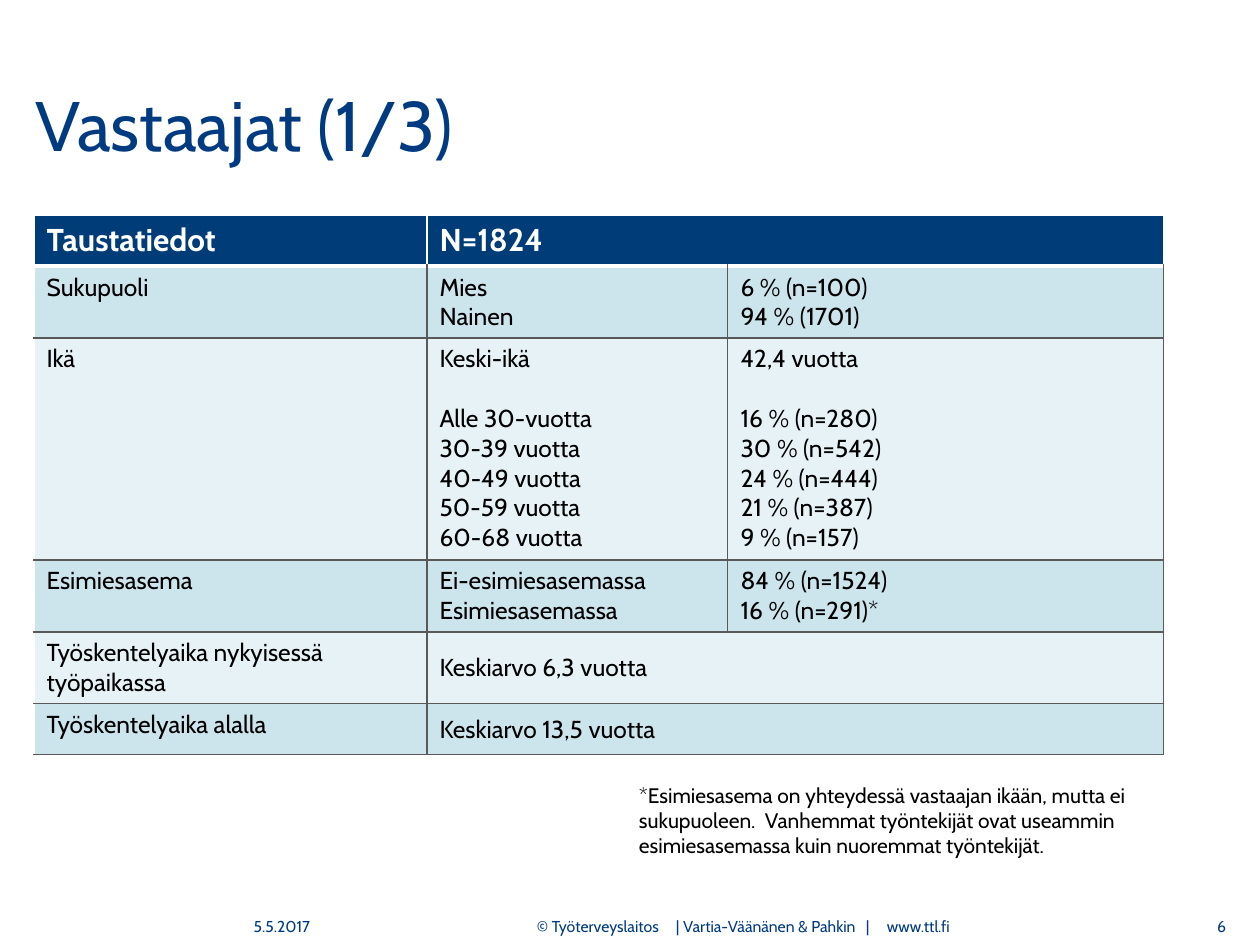
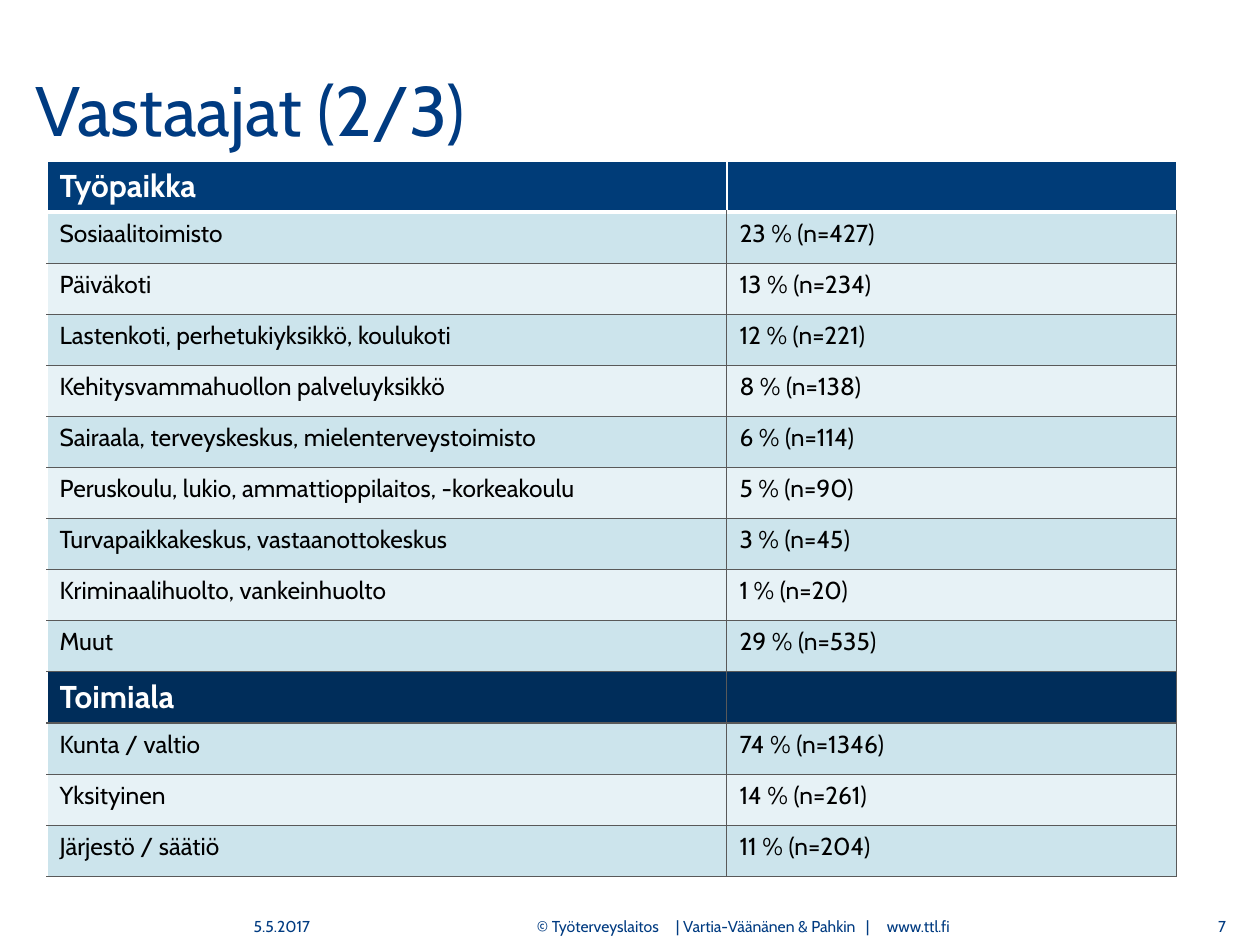
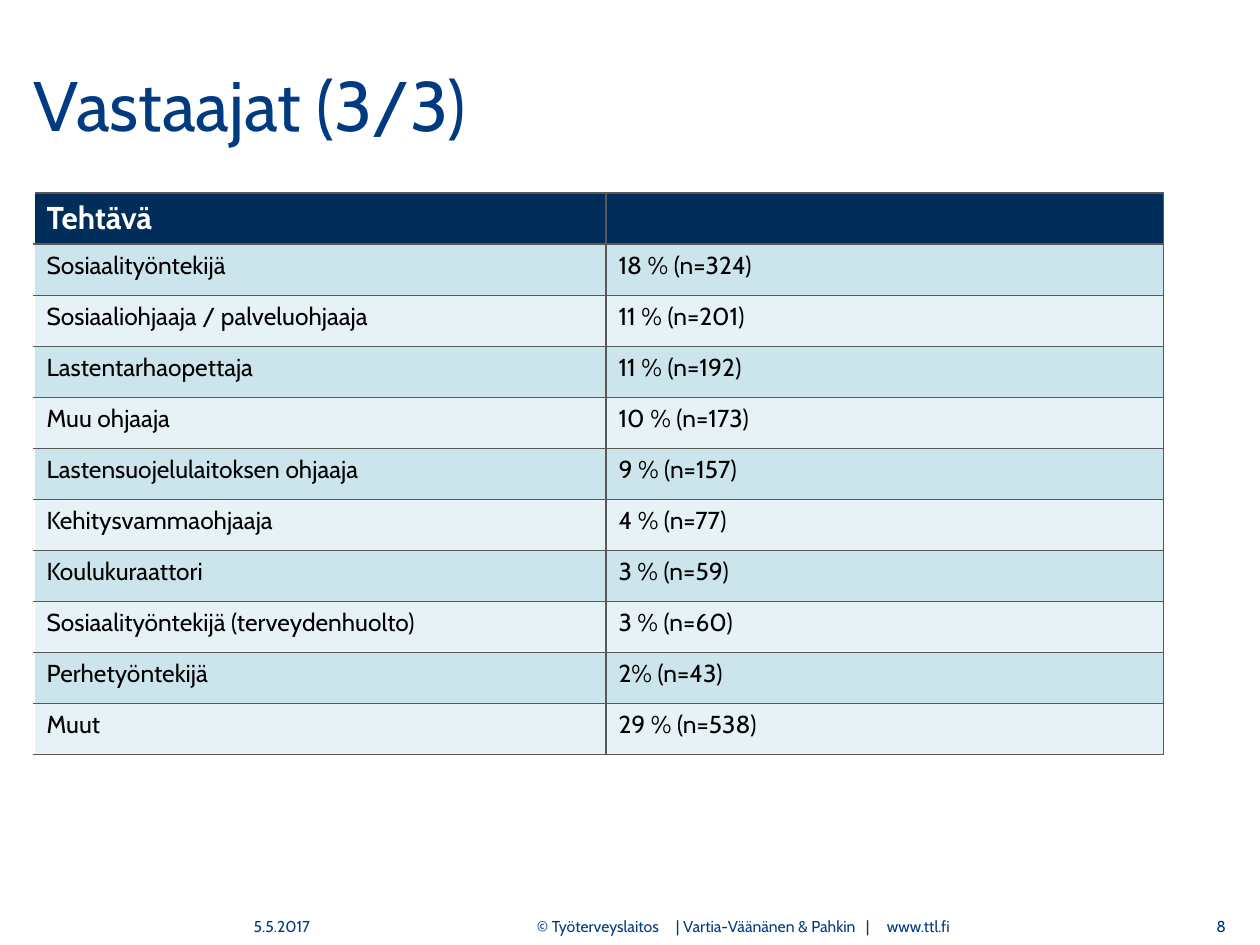
import pptx
import pptx.dml.color
import pptx.enum.text
import pptx.oxml
import pptx.oxml.ns
import pptx.util

FONT = "Cabin"
NAVY, BLACK, WHITE, GREY = "003B81", "000000", "FFFFFF", "595959"
HEAD_FILL, SECTION_FILL = "003C78", "002D5A"
BANDS = ("CCE4EC", "E7F2F6")
EMU_PER_PX = 914400 // 126
ALIGN = pptx.enum.text.PP_ALIGN
ANCHOR = pptx.enum.text.MSO_ANCHOR

# Content: a row is (kind, cells); a short row spans its last cell to the right edge,
# and a blank line in a cell becomes space before the next paragraph
DATE = "5.5.2017"
CREDIT = "© Työterveyslaitos\t| Vartia-Väänänen & Pahkin\t|\twww.ttl.fi"
FIRST_NUMBER = 6

SLIDES = [
    dict(
        title="Vastaajat (1/3)", title_at=(35, 42),
        table_at=(34, 215), columns=(393, 301, 436),
        heights=(51, 72, 222, 72, 72, 51),
        rows=[
            ("head", ["Taustatiedot", "N=1824"]),
            ("body", ["Sukupuoli", "Mies\nNainen", "6 % (n=100)\n94 % (1701)"]),
            ("body", ["Ikä",
                      "Keski-ikä\n\nAlle 30-vuotta\n30-39 vuotta\n40-49 vuotta\n"
                      "50-59 vuotta\n60-68 vuotta",
                      "42,4 vuotta\n\n16 % (n=280)\n30 % (n=542)\n24 % (n=444)\n"
                      "21 % (n=387)\n9 % (n=157)"]),
            ("body", ["Esimiesasema", "Ei-esimiesasemassa\nEsimiesasemassa",
                      "84 % (n=1524)\n16 % (n=291)*"]),
            ("body", ["Työskentelyaika nykyisessä työpaikassa", "Keskiarvo 6,3 vuotta"]),
            ("body", ["Työskentelyaika alalla", "Keskiarvo 13,5 vuotta"]),
        ],
        note="*Esimiesasema on yhteydessä vastaajan ikään, mutta ei sukupuoleen.  "
             "Vanhemmat työntekijät ovat useammin esimiesasemassa kuin nuoremmat "
             "työntekijät.",
    ),
    dict(
        title="Vastaajat (2/3)", title_at=(35, 27),
        table_at=(47, 161), columns=(680, 450), height=716,
        rows=[
            ("head", ["Työpaikka", ""]),
            ("body", ["Sosiaalitoimisto", "23 % (n=427)"]),
            ("body", ["Päiväkoti", "13 % (n=234)"]),
            ("body", ["Lastenkoti, perhetukiyksikkö, koulukoti", "12 % (n=221)"]),
            ("body", ["Kehitysvammahuollon palveluyksikkö", "8 % (n=138)"]),
            ("body", ["Sairaala, terveyskeskus, mielenterveystoimisto", "6 % (n=114)"]),
            ("body", ["Peruskoulu, lukio, ammattioppilaitos, -korkeakoulu", "5 % (n=90)"]),
            ("body", ["Turvapaikkakeskus, vastaanottokeskus", "3 % (n=45)"]),
            ("body", ["Kriminaalihuolto, vankeinhuolto", "1 % (n=20)"]),
            ("body", ["Muut", "29 % (n=535)"]),
            ("section", ["Toimiala", ""]),
            ("body", ["Kunta / valtio", "74 % (n=1346)"]),
            ("body", ["Yksityinen", "14 % (n=261)"]),
            ("body", ["Järjestö / säätiö", "11 % (n=204)"]),
        ],
    ),
    dict(
        title="Vastaajat (3/3)", title_at=(34, 22),
        table_at=(34, 193), columns=(572, 558), height=562,
        rows=[
            ("section", ["Tehtävä", ""]),
            ("body", ["Sosiaalityöntekijä", "18 % (n=324)"]),
            ("body", ["Sosiaaliohjaaja / palveluohjaaja", "11 % (n=201)"]),
            ("body", ["Lastentarhaopettaja", "11 % (n=192)"]),
            ("body", ["Muu ohjaaja", "10 % (n=173)"]),
            ("body", ["Lastensuojelulaitoksen ohjaaja", "9 % (n=157)"]),
            ("body", ["Kehitysvammaohjaaja", "4 % (n=77)"]),
            ("body", ["Koulukuraattori", "3 % (n=59)"]),
            ("body", ["Sosiaalityöntekijä (terveydenhuolto)", "3 % (n=60)"]),
            ("body", ["Perhetyöntekijä", "2% (n=43)"]),
            ("body", ["Muut", "29 % (n=538)"]),
        ],
    ),
]


def px(length):
    return pptx.util.Emu(round(length * EMU_PER_PX))


def rgb(color):
    return pptx.dml.color.RGBColor.from_string(color)


def add_run(paragraph, text, size, color, bold=False):
    run = paragraph.add_run()
    run.text = text
    font = run.font
    font.name, font.size, font.bold = FONT, pptx.util.Pt(size), bold
    font.color.rgb = rgb(color)


def add_text(slide, box, text, size, color=NAVY, align=ALIGN.LEFT, anchor=ANCHOR.TOP,
             left=0, right=0, tabs=()):
    frame = slide.shapes.add_textbox(*map(px, box)).text_frame
    frame.word_wrap = True
    frame.vertical_anchor = anchor
    frame.margin_left, frame.margin_right = px(left), px(right)
    paragraph = frame.paragraphs[0]
    paragraph.alignment = align
    if tabs:
        stops = "".join(f'<a:tab pos="{px(stop)}" algn="l"/>' for stop in tabs)
        paragraph._p.get_or_add_pPr().append(pptx.oxml.parse_xml(
            f'<a:tabLst {pptx.oxml.ns.nsdecls("a")}>{stops}</a:tabLst>'))
    add_run(paragraph, text, size, color)
    return paragraph


def set_borders(cell, kind, first_column, below_head):
    thin = (GREY, 0.75)
    if kind == "head":
        left, right = (WHITE, 1 if first_column else 1.5), (WHITE, 1.5)
        top, bottom = (WHITE, 1), (WHITE, 3)
    else:
        left, right = (WHITE, 1) if first_column else thin, thin
        top, bottom = (WHITE, 3) if below_head else thin, thin
    properties = cell._tc.get_or_add_tcPr()
    for side, (color, width) in zip("LRTB", (left, right, top, bottom)):
        properties.append(pptx.oxml.parse_xml(
            f'<a:ln{side} {pptx.oxml.ns.nsdecls("a")} w="{pptx.util.Pt(width)}">'
            f'<a:solidFill><a:srgbClr val="{color}"/></a:solidFill></a:ln{side}>'))


def fill_cell(cell, text, kind):
    size, color, bold = (14, BLACK, False) if kind == "body" else (18, WHITE, True)
    paragraph, gap = cell.text_frame.paragraphs[0], False
    for index, line in enumerate(text.split("\n")):
        if not line:
            gap = True
            continue
        if index:
            paragraph = cell.text_frame.add_paragraph()
        if gap:
            paragraph.space_before = pptx.util.Pt(17)
            gap = False
        add_run(paragraph, line, size, color, bold)


def add_background_table(slide, content):
    rows, columns = content["rows"], content["columns"]
    heights = content.get("heights") or [content["height"] / len(rows)] * len(rows)
    box = (*content["table_at"], sum(columns), sum(heights))
    table = slide.shapes.add_table(len(rows), len(columns), *map(px, box)).table
    table.horz_banding = False
    for column, width in zip(table.columns, columns):
        column.width = px(width)

    band, previous = 0, None
    for r, (kind, texts) in enumerate(rows):
        table.rows[r].height = px(heights[r])
        if kind == "body":
            fill = BANDS[band % 2]
            band += 1
        else:
            fill = HEAD_FILL if kind == "head" else SECTION_FILL
            band = 0
        for c in range(len(columns)):
            cell = table.cell(r, c)
            set_borders(cell, kind, c == 0, previous == "head")
            cell.fill.solid()
            cell.fill.fore_color.rgb = rgb(fill)
            if c < len(texts):
                fill_cell(cell, texts[c], kind)
        if len(texts) < len(columns):
            spanning = table.cell(r, len(texts) - 1)
            spanning.merge(table.cell(r, len(columns) - 1))
            if kind == "body":
                spanning.vertical_anchor = ANCHOR.MIDDLE
        previous = kind


def add_footer(slide, number):
    top, height = 892, 50
    add_text(slide, (87, top, 223, height), DATE, 9, align=ALIGN.RIGHT, anchor=ANCHOR.BOTTOM)
    add_text(slide, (323, top, 843, height), CREDIT, 9, anchor=ANCHOR.BOTTOM,
             left=214, right=10, tabs=(139, 329, 350))
    add_text(slide, (1177, top, 49, height), str(number), 9,
             align=ALIGN.RIGHT, anchor=ANCHOR.BOTTOM)


def main():
    deck = pptx.Presentation()
    deck.slide_width, deck.slide_height = px(1260), px(945)
    for number, content in enumerate(SLIDES, FIRST_NUMBER):
        slide = deck.slides.add_slide(deck.slide_layouts[6])
        title = add_text(slide, (*content["title_at"], 1191, 174), content["title"], 40,
                         anchor=ANCHOR.MIDDLE, right=13)
        title.line_spacing = 0.9
        add_footer(slide, number)
        add_background_table(slide, content)
        if "note" in content:
            add_text(slide, (626, 776, 538, 89), content["note"], 12, BLACK,
                     left=13, right=13)
    deck.save("out.pptx")


if __name__ == "__main__":
    main()
